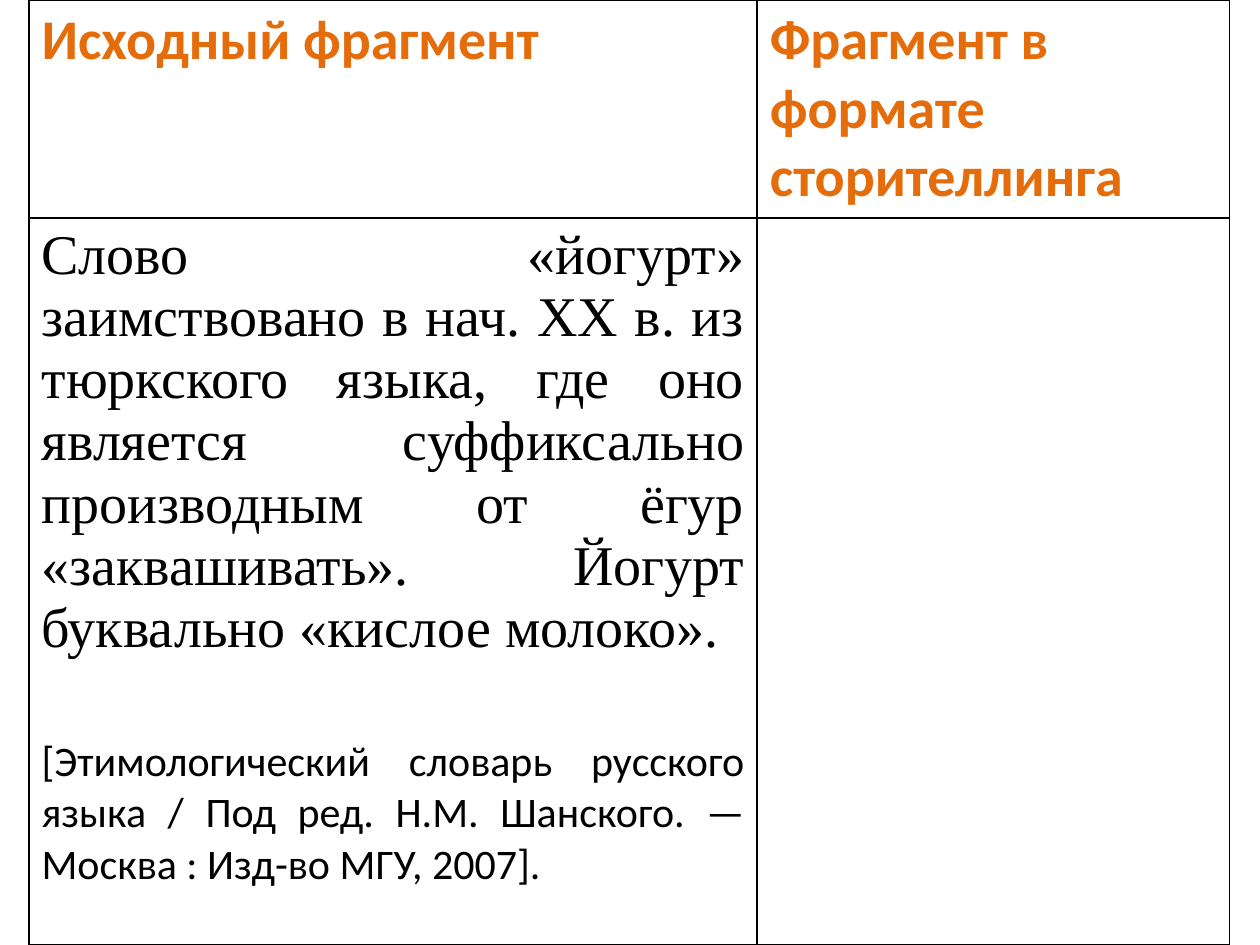
from pptx import Presentation
from pptx.dml.color import RGBColor
from pptx.enum import text
from pptx.oxml import parse_xml
from pptx.oxml.ns import nsdecls
from pptx.util import Inches, Pt

HUES = {"head": "E46C0A", "ink": "000000", "page": "FFFFFF"}
COLS = (5.78, 3.75)
ROWS = (1.73, 5.77)
HEADS = ("Исходный фрагмент", "Фрагмент в формате сторителлинга")
STORY = (
    "Слово «йогурт» заимствовано в нач. XX в. из тюркского языка, "
    "где оно является суффиксально производным от ёгур «заквашивать». "
    "Йогурт буквально «кислое молоко»."
)
SOURCE = (
    "[Этимологический словарь русского языка / Под ред. Н.М. Шанского. "
    "— Москва : Изд-во МГУ, 2007]."
)


def write(para, words, size=32, font="Calibri", hue="ink", bold=False,
          align=text.PP_ALIGN.LEFT, after=0):
    """Put formatted words into a paragraph."""
    para.alignment = align
    para.space_after = Pt(after)
    run = para.add_run()
    run.text = words
    run.font.size = Pt(size)
    run.font.name = font
    run.font.bold = bold
    run.font.color.rgb = RGBColor.from_string(HUES[hue])


def frame(cell):
    """Give a cell thin borders on all sides and a plain fill."""
    props = cell._tc.get_or_add_tcPr()
    for side in ("lnL", "lnR", "lnT", "lnB"):
        props.append(parse_xml(
            f'<a:{side} {nsdecls("a")} w="{Pt(1)}"><a:solidFill>'
            f'<a:srgbClr val="{HUES["ink"]}"/></a:solidFill></a:{side}>'
        ))
    cell.fill.solid()
    cell.fill.fore_color.rgb = RGBColor.from_string(HUES["page"])


def make_grid(slide):
    """Add the bordered two-column table."""
    grid = slide.shapes.add_table(
        len(ROWS), len(COLS), Inches(0.23), Inches(0),
        Inches(sum(COLS)), Inches(sum(ROWS))
    ).table
    grid.first_row = grid.horz_banding = False
    for col, width in zip(grid.columns, COLS):
        col.width = Inches(width)
    for row, height in zip(grid.rows, ROWS):
        row.height = Inches(height)
    for cell in grid.iter_cells():
        frame(cell)
    return grid


def main():
    """Build the slide and save it."""
    deck = Presentation()
    deck.slide_width, deck.slide_height = Inches(10), Inches(7.5)
    slide = deck.slides.add_slide(deck.slide_layouts[6])
    grid = make_grid(slide)
    for col, words in enumerate(HEADS):
        para = grid.cell(0, col).text_frame.paragraphs[0]
        write(para, words, hue="head", bold=True)
    body = grid.cell(1, 0).text_frame
    both = text.PP_ALIGN.JUSTIFY
    write(body.paragraphs[0], STORY, font="Times New Roman",
          align=both, after=44)
    write(body.add_paragraph(), SOURCE, size=24, align=both)
    deck.save("out.pptx")


if __name__ == "__main__":
    main()
